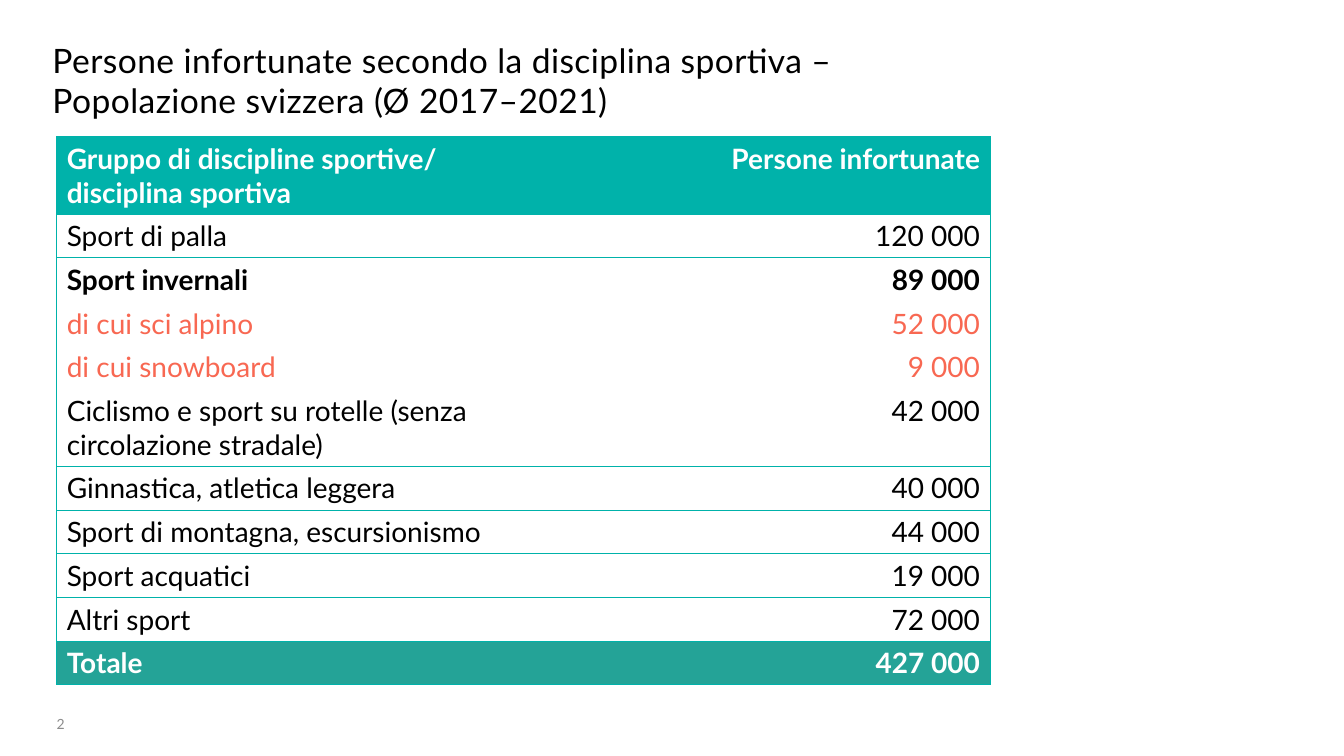
import dataclasses

import lxml.etree
import pptx
import pptx.dml.color
import pptx.enum.text
import pptx.oxml.ns
import pptx.util

EMU_PER_PX = 9525


@dataclasses.dataclass(frozen=True)
class Theme:
    font: str = "Lato"
    ink: str = "000000"
    white: str = "FFFFFF"
    teal: str = "00B2AA"
    total_teal: str = "24A397"
    coral: str = "F86852"
    grey: str = "8C8C8C"
    title_size: int = 24
    table_size: int = 20
    number_size: int = 10
    border_width: float = 0.5


THEME = Theme()

TITLE_LINES = (
    "Persone infortunate secondo la disciplina sportiva – ",
    "Popolazione svizzera (Ø 2017–2021)",
)

# role, discipline, injured people
ROWS = (
    ("header", "Gruppo di discipline sportive/ disciplina sportiva", "Persone infortunate"),
    ("plain", "Sport di palla", "120 000"),
    ("group", "Sport invernali", "89 000"),
    ("detail", "di cui sci alpino", "52 000"),
    ("detail", "di cui snowboard", "9 000"),
    ("plain", "Ciclismo e sport su rotelle (senza circolazione stradale)", "42 000"),
    ("plain", "Ginnastica, atletica leggera", "40 000"),
    ("plain", "Sport di montagna, escursionismo", "44 000"),
    ("plain", "Sport acquatici", "19 000"),
    ("plain", "Altri sport", "72 000"),
    ("total", "Totale", "427 000"),
)

# role: (text colour, bold, fill)
ROLE_STYLES = {
    "header": (THEME.white, True, THEME.teal),
    "plain": (THEME.ink, False, None),
    "group": (THEME.ink, True, None),
    "detail": (THEME.coral, False, None),
    "total": (THEME.white, True, THEME.total_teal),
}


def px(length):
    return pptx.util.Emu(length * EMU_PER_PX)


def rgb(colour):
    return pptx.dml.color.RGBColor.from_string(colour)


def add_run(paragraph, text, size, colour, bold=False):
    run = paragraph.add_run()
    run.text = text
    run.font.name = THEME.font
    run.font.size = pptx.util.Pt(size)
    run.font.bold = bold
    run.font.color.rgb = rgb(colour)
    return run


def add_text_area(slide, left, top, width, height):
    """Add a text box without margins and return its first paragraph."""
    frame = slide.shapes.add_textbox(px(left), px(top), px(width), px(height)).text_frame
    frame.word_wrap = True
    frame.margin_left = frame.margin_top = frame.margin_right = frame.margin_bottom = 0
    return frame.paragraphs[0]


def add_title(slide):
    paragraph = add_text_area(slide, 50, 38, 1179, 34)
    for index, line in enumerate(TITLE_LINES):
        if index:
            paragraph.add_line_break()
        run = add_run(paragraph, line, THEME.title_size, THEME.ink)
        run.font._element.set("spc", "30")


def add_page_number(slide):
    paragraph = add_text_area(slide, 54, 681, 85, 17)
    add_run(paragraph, "2", THEME.number_size, THEME.grey)


def set_borders(cell, visible_sides):
    """Draw the named sides (L, R, T, B) and clear the others."""
    properties = cell._tc.get_or_add_tcPr()
    qn = pptx.oxml.ns.qn
    for position, side in enumerate("LRTB"):
        line = lxml.etree.Element(qn(f"a:ln{side}"))
        line.set("w", str(int(pptx.util.Pt(THEME.border_width))))
        if side in visible_sides:
            fill = lxml.etree.SubElement(line, qn("a:solidFill"))
            lxml.etree.SubElement(fill, qn("a:srgbClr")).set("val", THEME.teal)
        else:
            lxml.etree.SubElement(line, qn("a:noFill"))
        properties.insert(position, line)


def is_ruled(upper_role, lower_role):
    """Winter sports and their details run on without rules below them."""
    return upper_role not in ("group", "detail") and lower_role != "detail"


def fill_cell(cell, text, role, is_value):
    colour, bold, background = ROLE_STYLES[role]
    if background:
        cell.fill.solid()
        cell.fill.fore_color.rgb = rgb(background)
    else:
        cell.fill.background()
    paragraph = cell.text_frame.paragraphs[0]
    align = pptx.enum.text.PP_ALIGN
    paragraph.alignment = align.RIGHT if is_value else align.LEFT
    add_run(paragraph, text, THEME.table_size, colour, bold)


def add_injury_table(slide):
    column_widths = (444, 445)
    row_height = 39
    table = slide.shapes.add_table(
        len(ROWS), len(column_widths), px(54), px(130),
        px(sum(column_widths)), px(row_height * len(ROWS)),
    ).table
    table.horz_banding = False
    for column, width in zip(table.columns, column_widths):
        column.width = px(width)
    roles = [role for role, _, _ in ROWS]
    for index, (role, *texts) in enumerate(ROWS):
        table.rows[index].height = px(row_height)
        top = "T" if index == 0 or is_ruled(roles[index - 1], role) else ""
        bottom = "B" if index == len(ROWS) - 1 or is_ruled(role, roles[index + 1]) else ""
        for column, text in enumerate(texts):
            cell = table.cell(index, column)
            fill_cell(cell, text, role, is_value=column == 1)
            set_borders(cell, "LR"[column] + top + bottom)


def main():
    presentation = pptx.Presentation()
    presentation.slide_width = px(1280)
    presentation.slide_height = px(720)
    slide = presentation.slides.add_slide(presentation.slide_layouts[6])
    add_title(slide)
    add_page_number(slide)
    add_injury_table(slide)
    presentation.save("out.pptx")


if __name__ == "__main__":
    main()
